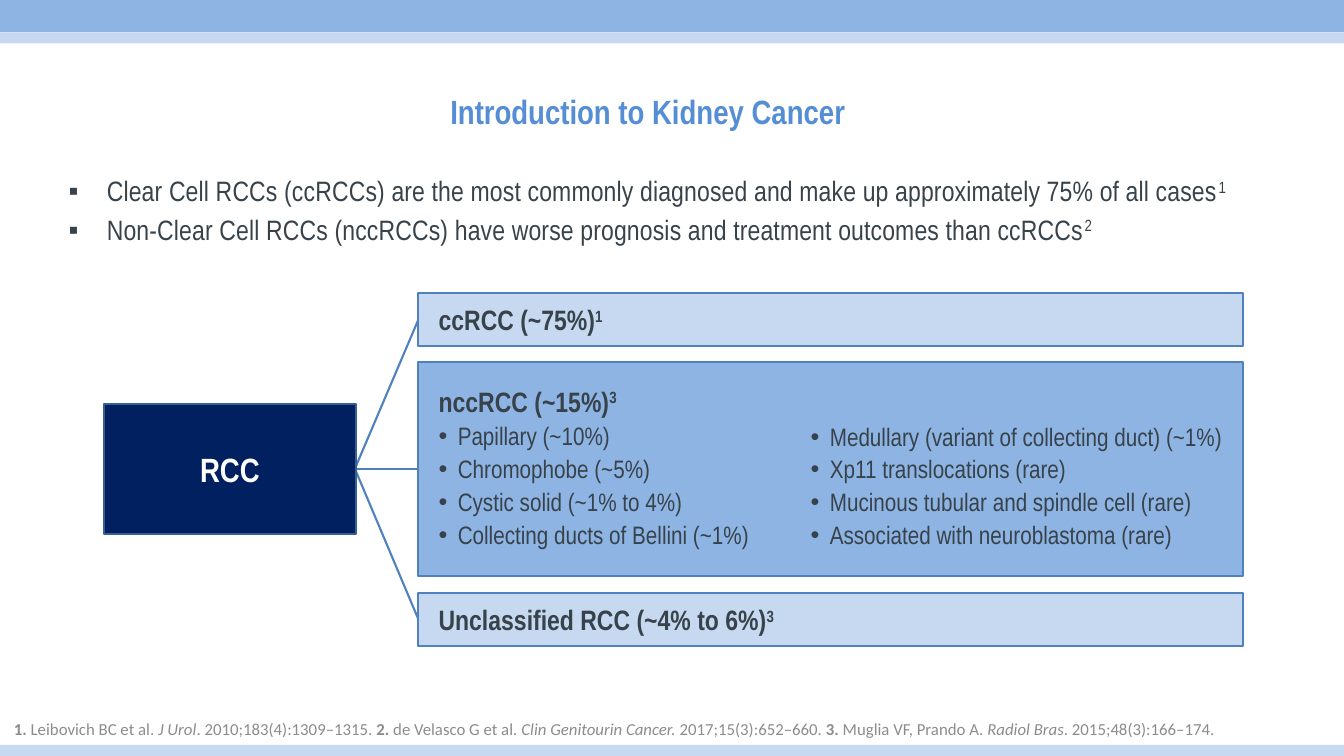
import pptx
import pptx.dml.color
import pptx.enum.shapes
import pptx.enum.text
import pptx.oxml.ns
import pptx.util
from lxml import etree

Inches = pptx.util.Inches
Pt = pptx.util.Pt
ALIGN = pptx.enum.text.PP_ALIGN
ANCHOR = pptx.enum.text.MSO_ANCHOR

SLIDE_WIDTH, SLIDE_HEIGHT = 13.33, 7.5


def color(hex_string):
    return pptx.dml.color.RGBColor.from_string(hex_string)


def add_element(parent, tag, **attributes):
    return etree.SubElement(parent, pptx.oxml.ns.qn(tag), attributes)


def write_text(frame, paragraphs, size=20, font="Arial Narrow", ink="37424A", bold=False,
               align=ALIGN.LEFT, anchor=ANCHOR.TOP, insets=(0.1, 0.05, 0.1, 0.05),
               line_spacing=None, space_after=None, tracking=None):
    """Fill a frame; each paragraph is a dict with runs of (text, marks) and optional
    size, bullet and indent. Marks: b bold, i italic, ^ superscript."""
    frame.word_wrap = True
    frame.vertical_anchor = anchor
    frame.margin_left, frame.margin_top, frame.margin_right, frame.margin_bottom = map(Inches, insets)
    for index, content in enumerate(paragraphs):
        paragraph = frame.add_paragraph() if index else frame.paragraphs[0]
        paragraph.alignment = align
        if line_spacing:
            paragraph.line_spacing = line_spacing
        if space_after:
            paragraph.space_after = Pt(space_after)
        if "bullet" in content:
            properties = paragraph._p.get_or_add_pPr()
            indent = Inches(content["indent"])
            properties.set("marL", str(indent))
            properties.set("indent", str(-indent))
            bullet_color = add_element(properties, "a:buClr")
            add_element(bullet_color, "a:srgbClr", val=ink)
            add_element(properties, "a:buFont", typeface="Arial")
            add_element(properties, "a:buChar", char=content["bullet"])
        for text, marks in content["runs"]:
            run = paragraph.add_run()
            run.text = text
            run.font.name = font
            run.font.size = Pt(content.get("size", size))
            run.font.bold = bold or "b" in marks
            run.font.italic = "i" in marks
            run.font.color.rgb = color(ink)
            if "^" in marks:
                run.font._element.set("baseline", "30000")
            if tracking:
                run.font._element.set("spc", str(tracking))


def plain(text):
    return {"runs": [(text, "")]}


def bullets(items):
    return [{"runs": [(item, "")], "bullet": "•", "indent": 0.19, "size": 18} for item in items]


def heading(text, reference):
    return {"runs": [(text, "b"), (reference, "b^")]}


class KidneySlide:
    pale, medium, navy = "C6D9F1", "8EB4E3", "002060"
    outline, navy_outline = "4F81BD", "376092"
    line_width = 1.5

    def __init__(self, presentation):
        self.slide = presentation.slides.add_slide(presentation.slide_layouts[6])

    def box(self, left, top, width, height, fill, line=None):
        shape = self.slide.shapes.add_shape(
            pptx.enum.shapes.MSO_SHAPE.RECTANGLE, *map(Inches, (left, top, width, height)))
        shape.shadow.inherit = False
        shape.fill.solid()
        shape.fill.fore_color.rgb = color(fill)
        if line:
            shape.line.color.rgb = color(line)
            shape.line.width = Pt(self.line_width)
        else:
            shape.line.fill.background()
        return shape.text_frame

    def branch(self, start, end):
        connector = self.slide.shapes.add_connector(
            pptx.enum.shapes.MSO_CONNECTOR.STRAIGHT, *map(Inches, start + end))
        connector.line.color.rgb = color(self.outline)
        connector.line.width = Pt(self.line_width)
        add_element(connector._element.spPr, "a:effectLst")

    def text(self, left, top, width, height, paragraphs, **style):
        text_box = self.slide.shapes.add_textbox(*map(Inches, (left, top, width, height)))
        write_text(text_box.text_frame, paragraphs, **style)


def main():
    presentation = pptx.Presentation()
    presentation.slide_width = Inches(SLIDE_WIDTH)
    presentation.slide_height = Inches(SLIDE_HEIGHT)
    page = KidneySlide(presentation)

    for top, height, fill in ((0, 0.32, page.medium), (0.32, 0.11, page.pale),
                              (7.39, 0.11, page.pale)):
        page.box(0, top, SLIDE_WIDTH, height, fill)

    page.text(0.88, 0.7, 11.09, 0.8, [plain("Introduction to Kidney Cancer")], size=24,
              ink="558ED5", bold=True, align=ALIGN.CENTER, anchor=ANCHOR.MIDDLE)

    key_points = (
        ("Clear Cell RCCs (ccRCCs) are the most commonly diagnosed and make up "
         "approximately 75% of all cases", "1"),
        ("Non-Clear Cell RCCs (nccRCCs) have worse prognosis and treatment outcomes "
         "than ccRCCs", "2"))
    page.text(0.68, 1.76, 12, 0.9,
              [{"runs": [(text, ""), (reference, "^")], "bullet": "▪", "indent": 0.38}
               for text, reference in key_points],
              insets=(0, 0, 0, 0), line_spacing=0.9, space_after=6, tracking=10)

    root_right, root_middle, class_left, class_width = 3.52, 4.65, 4.15, 8.18
    common_types = bullets(("Papillary (~10%)", "Chromophobe (~5%)", "Cystic solid (~1% to 4%)",
                            "Collecting ducts of Bellini (~1%)"))
    rare_types = bullets(("Medullary (variant of collecting duct) (~1%)",
                          "Xp11 translocations (rare)",
                          "Mucinous tubular and spindle cell (rare)",
                          "Associated with neuroblastoma (rare)"))
    list_spacing = {"line_spacing": 0.9, "space_after": 4}
    classes = (
        (2.91, 0.52, page.pale, [heading("ccRCC (~75%)", "1")], {}),
        (3.59, 2.12, page.medium, [heading("nccRCC (~15%)", "3")] + common_types, list_spacing),
        (5.88, 0.53, page.pale, [heading("Unclassified RCC (~4% to 6%)", "3")], {}))
    for top, height, fill, paragraphs, spacing in classes:
        page.branch((root_right, root_middle), (class_left, top + height / 2))
        frame = page.box(class_left, top, class_width, height, fill, page.outline)
        write_text(frame, paragraphs, anchor=ANCHOR.MIDDLE, insets=(0.2, 0.05, 0.1, 0.05), **spacing)
    page.text(8.04, 4.21, 4.12, 1.26, rare_types, insets=(0, 0, 0, 0), **list_spacing)

    root = page.box(1.03, 4.01, 2.5, 1.29, page.navy, page.navy_outline)
    write_text(root, [plain("RCC")], size=24, ink="FFFFFF", bold=True,
               align=ALIGN.CENTER, anchor=ANCHOR.MIDDLE)

    references = [
        ("1. ", "b"), ("Leibovich BC et al. ", ""), ("J Urol", "i"),
        (". 2010;183(4):1309–1315. ", ""),
        ("2. ", "b"), ("de Velasco G et al. ", ""), ("Clin Genitourin Cancer. ", "i"),
        ("2017;15(3):652–660. ", ""),
        ("3. ", "b"), ("Muglia VF, Prando A. ", ""), ("Radiol Bras", "i"),
        (". 2015;48(3):166–174.", "")]
    page.text(0.04, 6.98, 13.04, 0.5, [{"runs": references}], size=12, font="Calibri",
              ink="8C8C8C", anchor=ANCHOR.MIDDLE)

    presentation.save("out.pptx")


if __name__ == "__main__":
    main()
